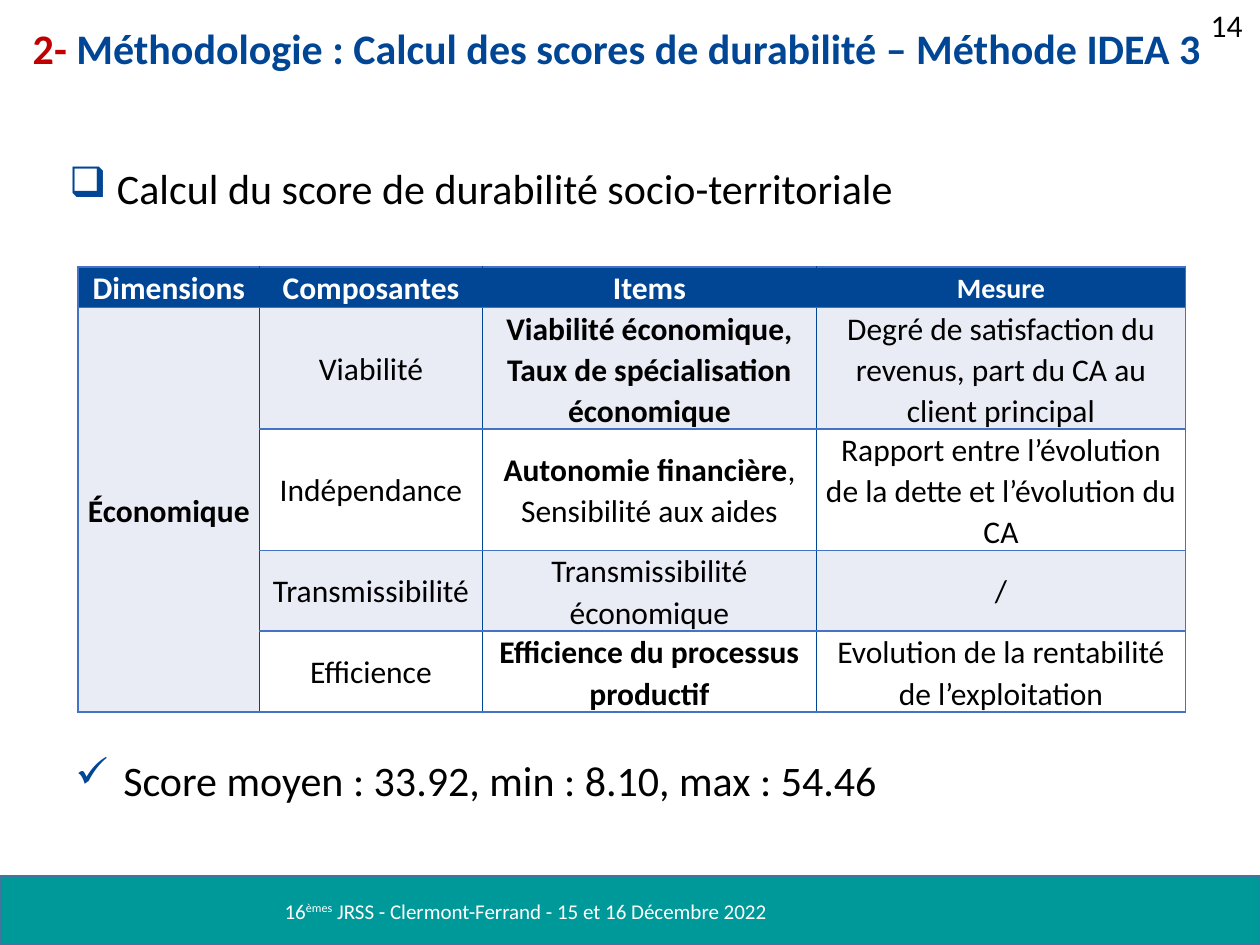
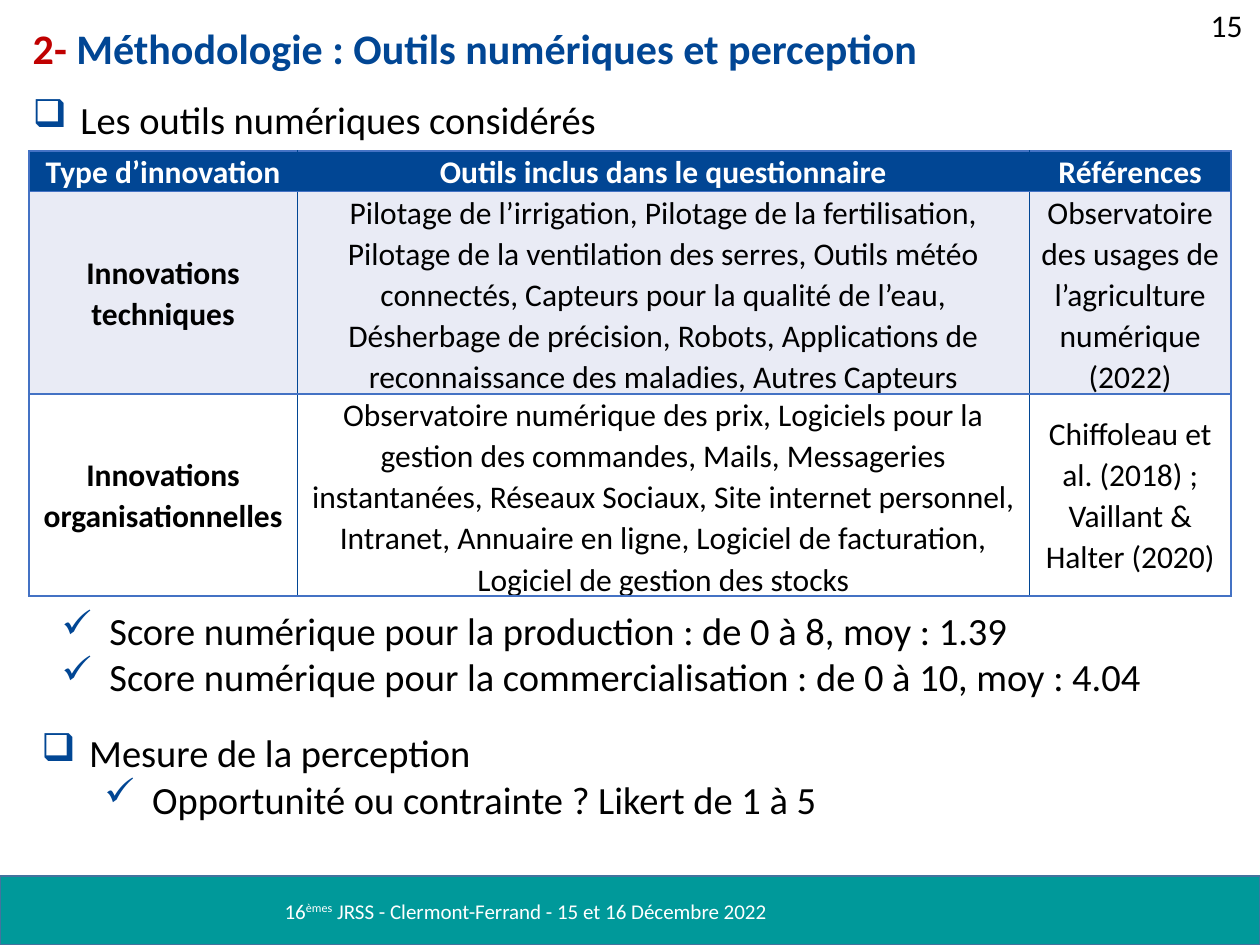
from lxml.etree import SubElement
from pptx import Presentation
from pptx.dml.color import RGBColor
from pptx.enum.shapes import MSO_SHAPE
from pptx.enum.text import MSO_ANCHOR, MSO_AUTO_SIZE, PP_ALIGN
from pptx.oxml import parse_xml
from pptx.oxml.ns import nsdecls, qn
from pptx.util import Inches, Pt

FONT = "Calibri"
BLUE, RED, TEAL = "014694", "C00000", "00999A"
EDGE, BAND_EDGE, STRIPE = "4472C4", "43739E", "E9EBF5"
WHITE, BLACK = "FFFFFF", "000000"
SQUARE, CHECK = "❑", "✓"


def colour(value):
    """Return the colour for a hex string."""
    return RGBColor.from_string(value)


def apply(target, formats):
    """Set each attribute of the target from a dict."""
    for name, value in formats.items():
        setattr(target, name, value)


def add_span(para, text, size, hue=BLACK, bold=False):
    """Add one formatted run to a paragraph."""
    span = para.add_run()
    span.text = text
    apply(span.font, {"name": FONT, "size": Pt(size), "bold": bold})
    span.font.color.rgb = colour(hue)
    return span


def add_text_box(page, box):
    """Add a wrapping text box and return its text frame."""
    frame = page.shapes.add_textbox(*map(Inches, box)).text_frame
    frame.word_wrap = True
    return frame


def add_bullet(para, symbol, level):
    """Give a paragraph a blue bullet with a hanging indent."""
    properties = para._p.get_or_add_pPr()
    properties.set("marL", str(Inches(0.38 + 0.5 * level)))
    properties.set("indent", str(Inches(-0.38)))
    hue = SubElement(properties, qn("a:buClr"))
    SubElement(hue, qn("a:srgbClr"), val=BLUE)
    SubElement(properties, qn("a:buChar"), char=symbol)


def add_list(page, box, size, items, after=0):
    """Write bulleted items, indenting the ticked ones."""
    frame = add_text_box(page, box)
    for index, (symbol, text) in enumerate(items):
        para = frame.add_paragraph() if index else frame.paragraphs[0]
        level = 1 if symbol == CHECK else 0
        add_bullet(para, symbol, level)
        apply(para, {"alignment": PP_ALIGN.JUSTIFY, "level": level})
        add_span(para, text, size)
    para.space_after = Pt(after)


def add_footer(page, box):
    """Draw the footer band and its conference line."""
    left, top, width, height = box
    band = page.shapes.add_shape(MSO_SHAPE.RECTANGLE, *map(Inches, box))
    band.shadow.inherit = False
    band.fill.solid()
    band.fill.fore_color.rgb = colour(TEAL)
    band.line.color.rgb = colour(BAND_EDGE)
    band.line.width = Pt(1)
    para = add_text_box(page, (left + 2.16, top + 0.13, 7.48, 0.3)).paragraphs[0]
    add_span(para, "16", 12, WHITE)
    ordinal = add_span(para, "èmes", 12, WHITE)
    ordinal._r.get_or_add_rPr().set("baseline", "30000")
    add_span(para, " JRSS - Clermont-Ferrand - 15 et 16 Décembre 2022", 12, WHITE)


def add_title(page, box, text):
    """Place the title placeholder with its red section number."""
    title = page.shapes.title
    apply(title, dict(zip(("left", "top", "width", "height"), map(Inches, box))))
    apply(title.text_frame, {"word_wrap": True, "auto_size": MSO_AUTO_SIZE.NONE,
                             "vertical_anchor": MSO_ANCHOR.MIDDLE})
    para = title.text_frame.paragraphs[0]
    apply(para, {"alignment": PP_ALIGN.JUSTIFY, "line_spacing": 0.9})
    add_span(para, "2-", 24, RED, True)
    add_span(para, f" Méthodologie : {text}", 24, BLUE, True)


def start_page(deck, title, number):
    """Add a page with the title, page number and footer."""
    page = deck.slides.add_slide(deck.slide_layouts[5])
    add_footer(page, (0, 6.95, 10, 0.55))
    add_title(page, (0.16, 0.12, 9.54, 0.57), title)
    para = add_text_box(page, (7.71, 0, 2.25, 0.4)).paragraphs[0]
    para.alignment = PP_ALIGN.RIGHT
    add_span(para, str(number), 18)
    return page


def set_borders(cell, hues):
    """Draw the left, right, top and bottom lines of a cell."""
    properties = cell._tc.get_or_add_tcPr()
    for index, (side, hue) in enumerate(zip("LRTB", hues)):
        properties.insert(index, parse_xml(
            f'<a:ln{side} {nsdecls("a")} w="12700"><a:solidFill>'
            f'<a:srgbClr val="{hue}"/></a:solidFill></a:ln{side}>'))


def add_grid(page, corner, widths, heights, rows, margins, header_sizes):
    """Add a table whose ** marks switch bold on and off."""
    box = (*corner, sum(widths), sum(heights))
    table = page.shapes.add_table(len(rows), len(widths), *map(Inches, box)).table
    for column, width in zip(table.columns, widths):
        column.width = Inches(width)
    for line, height in zip(table.rows, heights):
        line.height = Inches(height)
    last = len(widths) - 1
    for row, texts in enumerate(rows):
        fill = BLUE if row == 0 else STRIPE if row % 2 else WHITE
        for col, text in enumerate(texts):
            cell = table.cell(row, col)
            margin = Inches(margins[col])
            apply(cell, {"margin_left": margin, "margin_right": margin,
                         "margin_top": 0, "margin_bottom": 0,
                         "vertical_anchor": MSO_ANCHOR.MIDDLE})
            cell.fill.solid()
            cell.fill.fore_color.rgb = colour(fill)
            set_borders(cell, (BLUE if col else EDGE,
                               BLUE if col < last else EDGE, EDGE, EDGE))
            para = cell.text_frame.paragraphs[0]
            apply(para, {"alignment": PP_ALIGN.CENTER, "line_spacing": 1.07,
                         "space_after": Pt(8)})
            size = 18 if row else header_sizes[col]
            for index, part in enumerate(text.split("**")):
                if part:
                    add_span(para, part, size, BLACK if row else WHITE,
                             row == 0 or index % 2 == 1)
    return table


def build_scores_page(deck):
    """Build the page on the sustainability score."""
    page = start_page(deck, "Calcul des scores de durabilité – Méthode IDEA 3", 14)
    add_list(page, (0.45, 1.24, 8.78, 0.5), 24,
             [(SQUARE, "Calcul du score de durabilité socio-territoriale")], 12)
    rows = [
        ("Dimensions", "Composantes", "Items", "Mesure"),
        ("**Économique**", "Viabilité",
         "**Viabilité économique, Taux de spécialisation économique**",
         "Degré de satisfaction du revenus, part du CA au client principal"),
        ("", "Indépendance", "**Autonomie financière**, Sensibilité aux aides",
         "Rapport entre l’évolution de la dette et l’évolution du CA"),
        ("", "Transmissibilité", "Transmissibilité économique", "/"),
        ("", "Efficience", "**Efficience du processus productif**",
         "Evolution de la rentabilité de l’exploitation"),
    ]
    table = add_grid(page, (0.62, 2.12), (1.44, 1.77, 2.65, 2.93),
                     (0.32, 0.96, 0.96, 0.64, 0.64), rows,
                     (0.05, 0.05, 0.05, 0.07), (18, 18, 18, 16))
    table.cell(1, 0).merge(table.cell(4, 0))
    add_list(page, (0, 5.94, 7.61, 0.5), 24,
             [(CHECK, "Score moyen : 33.92, min : 8.10, max : 54.46")])


def build_tools_page(deck):
    """Build the page on digital tools and their perception."""
    page = start_page(deck, "Outils numériques et perception", 15)
    add_list(page, (0.16, 0.71, 8.78, 0.47), 22,
             [(SQUARE, "Les outils numériques considérés")], 12)
    rows = [
        ("Type d’innovation", "Outils inclus dans le questionnaire", "Références"),
        ("**Innovations techniques**",
         "Pilotage de l’irrigation, Pilotage de la fertilisation, Pilotage de la "
         "ventilation des serres, Outils météo connectés, Capteurs pour la qualité "
         "de l’eau, Désherbage de précision, Robots, Applications de "
         "reconnaissance des maladies, Autres Capteurs",
         "Observatoire des usages de l’agriculture numérique (2022)"),
        ("**Innovations organisationnelles**",
         "Observatoire numérique des prix, Logiciels pour la gestion des commandes, "
         "Mails, Messageries instantanées, Réseaux Sociaux, Site internet "
         "personnel, Intranet, Annuaire en ligne, Logiciel de facturation, "
         "Logiciel de gestion des stocks",
         "Chiffoleau et al. (2018) ; Vaillant & Halter (2020)"),
    ]
    add_grid(page, (0.23, 1.2), (2.13, 5.81, 1.6), (0.32, 1.6, 1.6), rows,
             (0.07,) * 3, (18,) * 3)
    add_list(page, (0.23, 5.74, 7.55, 0.84), 22,
             [(SQUARE, "Mesure de la perception"),
              (CHECK, "Opportunité ou contrainte ? Likert de 1 à 5")], 12)
    add_list(page, (-0.11, 4.77, 10.22, 0.84), 22,
             [(CHECK, "Score numérique pour la production : de 0 à 8, moy : 1.39"),
              (CHECK, "Score numérique pour la commercialisation : de 0 à 10, "
                      "moy : 4.04")])


def main():
    """Build and save the deck."""
    deck = Presentation()
    apply(deck, {"slide_width": Inches(10), "slide_height": Inches(7.5)})
    build_scores_page(deck)
    build_tools_page(deck)
    deck.save("out.pptx")


if __name__ == "__main__":
    main()
